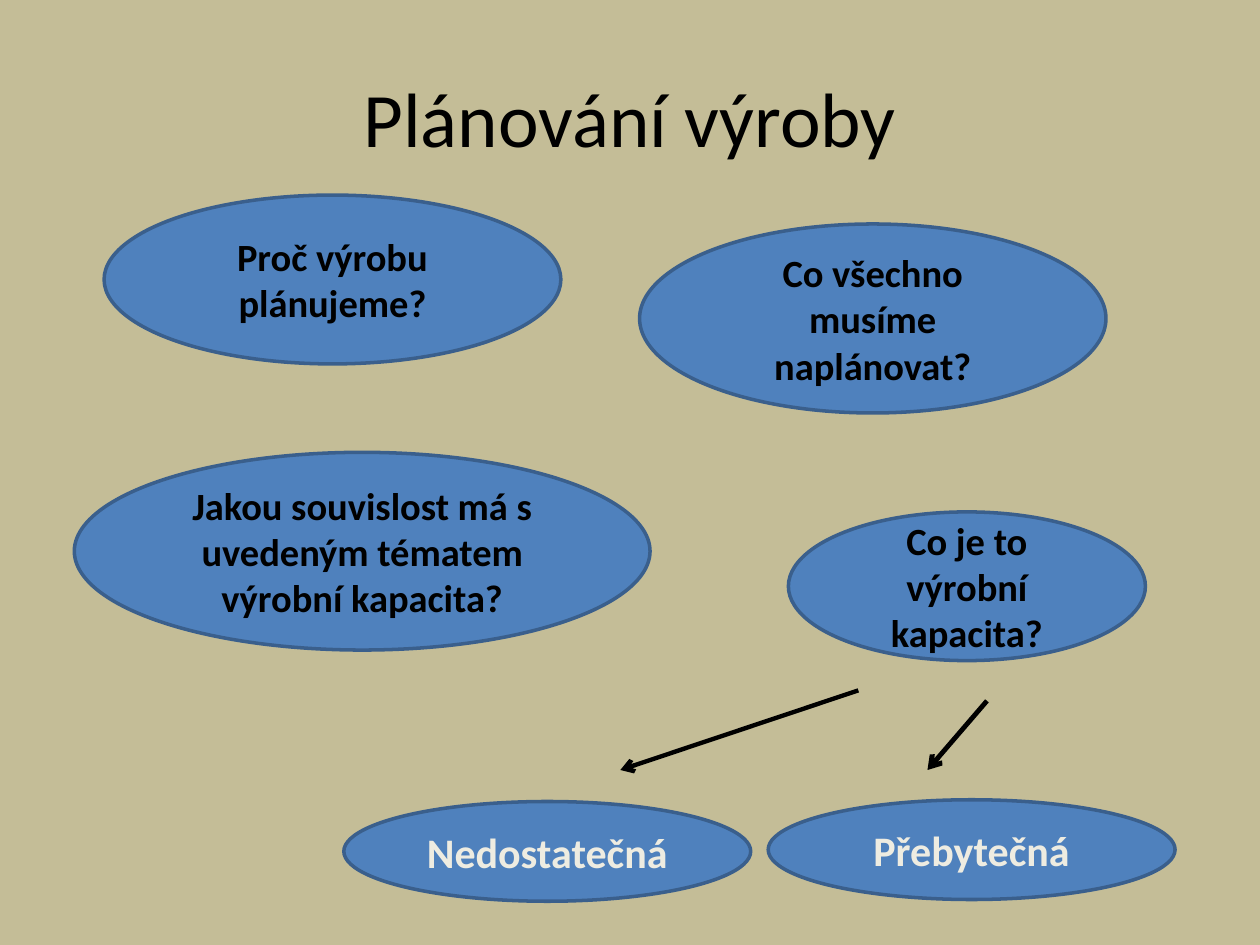
"""Build the slide on production planning with question bubbles and arrows."""
from lxml.etree import SubElement
from pptx import Presentation
from pptx.dml.color import RGBColor
from pptx.enum.shapes import MSO_CONNECTOR, MSO_SHAPE
from pptx.enum.text import MSO_ANCHOR, PP_ALIGN
from pptx.oxml.ns import qn
from pptx.util import Pt

SAND = RGBColor(0xC4, 0xBD, 0x97)
BLUE = RGBColor(0x4F, 0x81, 0xBD)
DARK_BLUE = RGBColor(0x3A, 0x5F, 0x8C)
CREAM = RGBColor(0xEE, 0xEC, 0xE1)
BLACK = RGBColor(0, 0, 0)

TITLE = "Plánování výroby"
QUESTIONS = [
    ("Proč výrobu plánujeme?", (59.5, 111.5, 261, 96.5)),
    ("Co všechno musíme naplánovat?", (365.5, 128, 266.5, 108)),
    ("Jakou souvislost má s uvedeným tématem výrobní kapacita?", (42.5, 258.5, 329, 113)),
    ("Co je to výrobní kapacita?", (450.5, 292.5, 204, 85)),
]
ARROWS = [
    ((490.5, 394.5), (354.5, 440), 2.5),
    ((564, 400.5), (530, 440), 2.75),
]
ANSWERS = [
    ("Přebytečná", (439, 457, 232.5, 57)),
    ("Nedostatečná", (196.5, 458, 232.5, 57)),
]


def set_text(sp, text, size, color=BLACK, bold=False):
    tf = sp.text_frame
    tf.word_wrap = True
    tf.vertical_anchor = MSO_ANCHOR.MIDDLE
    p = tf.paragraphs[0]
    p.alignment = PP_ALIGN.CENTER
    r = p.add_run()
    r.text = text
    r.font.name = "Calibri"
    r.font.size = Pt(size)
    r.font.bold = bold
    r.font.color.rgb = color


def add_bubble(s, text, box, **fmt):
    sp = s.shapes.add_shape(MSO_SHAPE.OVAL, *map(Pt, box))
    sp.shadow.inherit = False
    sp.fill.solid()
    sp.fill.fore_color.rgb = BLUE
    sp.line.color.rgb = DARK_BLUE
    sp.line.width = Pt(2)
    set_text(sp, text, bold=True, **fmt)


def add_arrow(s, start, end, width):
    line = s.shapes.add_connector(MSO_CONNECTOR.STRAIGHT, *map(Pt, start + end))
    line.line.color.rgb = BLACK
    line.line.width = Pt(width)
    sp_pr = line._element.spPr
    SubElement(sp_pr.find(qn("a:ln")), qn("a:tailEnd"), type="arrow")
    SubElement(sp_pr, qn("a:effectLst"))


def main():
    prs = Presentation()
    prs.slide_width, prs.slide_height = Pt(720), Pt(540)
    s = prs.slides.add_slide(prs.slide_layouts[6])
    s.background.fill.solid()
    s.background.fill.fore_color.rgb = SAND

    title = s.shapes.add_textbox(Pt(36), Pt(21.6), Pt(648), Pt(90))
    set_text(title, TITLE, size=44)
    for text, box in QUESTIONS:
        add_bubble(s, text, box, size=22)
    for start, end, width in ARROWS:
        add_arrow(s, start, end, width)
    for text, box in ANSWERS:
        add_bubble(s, text, box, size=24, color=CREAM)
    prs.save("out.pptx")


if __name__ == "__main__":
    main()
